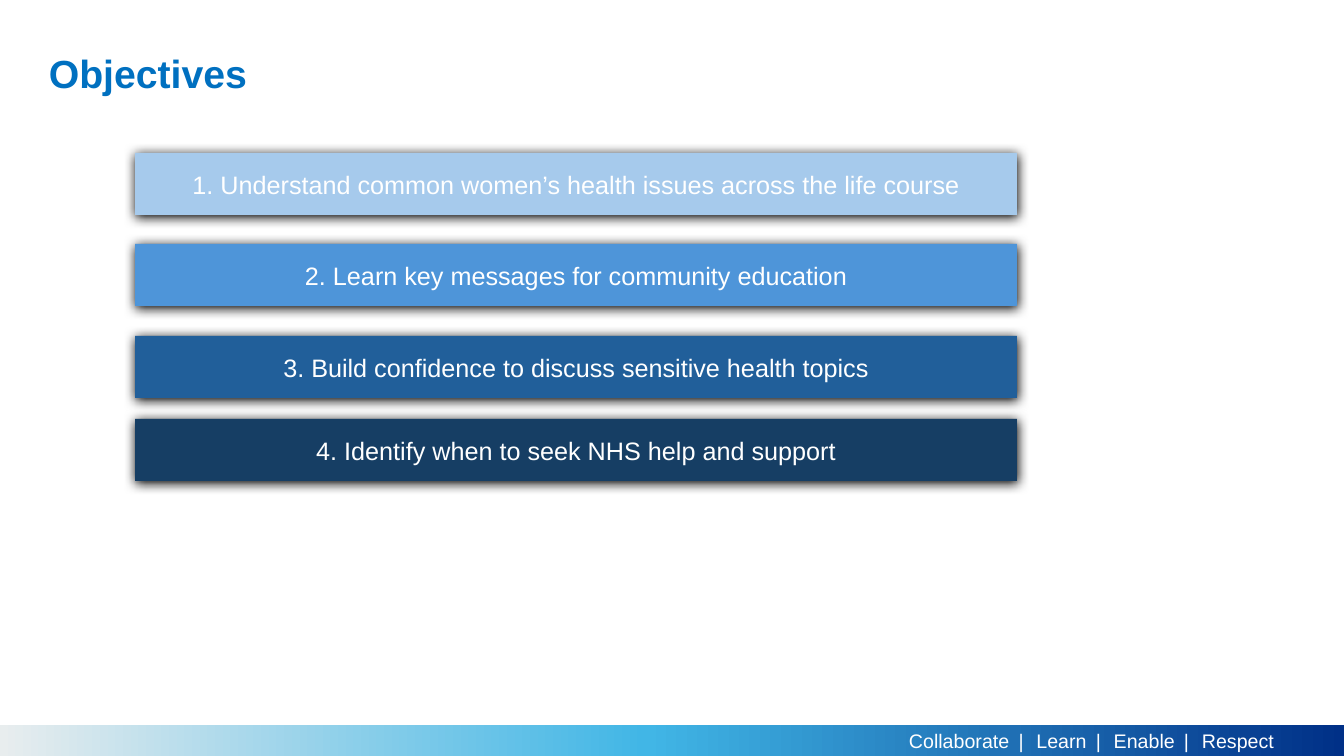
import lxml.etree
import pptx
import pptx.dml.color
import pptx.enum.shapes
import pptx.enum.text
import pptx.oxml
import pptx.oxml.ns
import pptx.util

RGBColor = pptx.dml.color.RGBColor
WHITE = RGBColor(0xFF, 0xFF, 0xFF)
TITLE_BLUE = RGBColor(0x00, 0x70, 0xC0)
PALE_BLUE = RGBColor(0xA6, 0xCA, 0xEC)
MID_BLUE = RGBColor(0x4E, 0x95, 0xD9)
DEEP_BLUE = RGBColor(0x21, 0x5F, 0x9A)
NAVY = RGBColor(0x16, 0x3E, 0x64)
BAND_STOPS = [
    (0, RGBColor(0xE8, 0xED, 0xEE)),
    (48, RGBColor(0x41, 0xB6, 0xE6)),
    (100, RGBColor(0x00, 0x30, 0x87)),
]
RECTANGLE = pptx.enum.shapes.MSO_SHAPE.RECTANGLE
CENTER = pptx.enum.text.PP_ALIGN.CENTER
MIDDLE = pptx.enum.text.MSO_ANCHOR.MIDDLE
SLIDE_WIDTH, SLIDE_HEIGHT = 1344, 756
EMU_PER_PX = 12192000 / SLIDE_WIDTH


def px(*lengths):
    return [pptx.util.Emu(round(length * EMU_PER_PX)) for length in lengths]


def add_run(paragraph, text, size, color, bold=False):
    run = paragraph.add_run()
    run.text = text
    run.font.name = "Arial"
    run.font.size = pptx.util.Pt(size)
    run.font.bold = bold
    run.font.color.rgb = color
    return run


presentation = pptx.Presentation()
presentation.slide_width, presentation.slide_height = px(SLIDE_WIDTH, SLIDE_HEIGHT)
slide = presentation.slides.add_slide(presentation.slide_layouts[6])

band = slide.shapes.add_shape(RECTANGLE, *px(0, 725, SLIDE_WIDTH, 31))
band.shadow.inherit = False
band.line.fill.background()
band.fill.gradient()
band.fill.gradient_angle = 0
stop_list = band.fill.gradient_stops[0]._gs.getparent()
for stop in list(stop_list):
    stop_list.remove(stop)
for position, color in BAND_STOPS:
    stop = lxml.etree.SubElement(stop_list, pptx.oxml.ns.qn("a:gs"), pos=str(position * 1000))
    lxml.etree.SubElement(stop, pptx.oxml.ns.qn("a:srgbClr"), val=str(color))

values_box = slide.shapes.add_textbox(*px(863, 724, 457, 34))
values_box.text_frame.word_wrap = True
paragraph = values_box.text_frame.paragraphs[0]
paragraph.alignment = CENTER
for index, value in enumerate(["Collaborate", "Learn", "Enable", "Respect"]):
    if index:
        separator = add_run(paragraph, " | ", 14, WHITE)
        separator.font._element.set("spc", "260")
    add_run(paragraph, value, 14, WHITE)

title = slide.shapes.add_textbox(*px(39, 40, 1159, 71))
title.text_frame.word_wrap = True
title.text_frame.vertical_anchor = MIDDLE
paragraph = title.text_frame.paragraphs[0]
paragraph.line_spacing = 0.9
add_run(paragraph, "Objectives", 28, TITLE_BLUE, bold=True)

objectives = [
    (153, PALE_BLUE, "1. Understand common women’s health issues across the life course"),
    (244, MID_BLUE, "2. Learn key messages for community education"),
    (336, DEEP_BLUE, "3. Build confidence to discuss sensitive health topics"),
    (419, NAVY, "4. Identify when to seek NHS help and support"),
]
for top, color, text in objectives:
    bar = slide.shapes.add_shape(RECTANGLE, *px(135, top, 882, 62))
    bar.fill.solid()
    bar.fill.fore_color.rgb = color
    bar.line.fill.background()
    bar.shadow.inherit = False
    effects = bar._element.spPr.find(pptx.oxml.ns.qn("a:effectLst"))
    shadow = lxml.etree.SubElement(
        effects,
        pptx.oxml.ns.qn("a:outerShdw"),
        blurRad=str(pptx.util.Pt(8.5)),
        dist=str(pptx.util.Pt(1)),
        dir="5400000",
        algn="ctr",
        rotWithShape="0",
    )
    lxml.etree.SubElement(shadow, pptx.oxml.ns.qn("a:srgbClr"), val="000000")
    bar.text_frame.word_wrap = True
    bar.text_frame.vertical_anchor = MIDDLE
    paragraph = bar.text_frame.paragraphs[0]
    paragraph.alignment = CENTER
    add_run(paragraph, text, 18, WHITE)

presentation.save("out.pptx")
